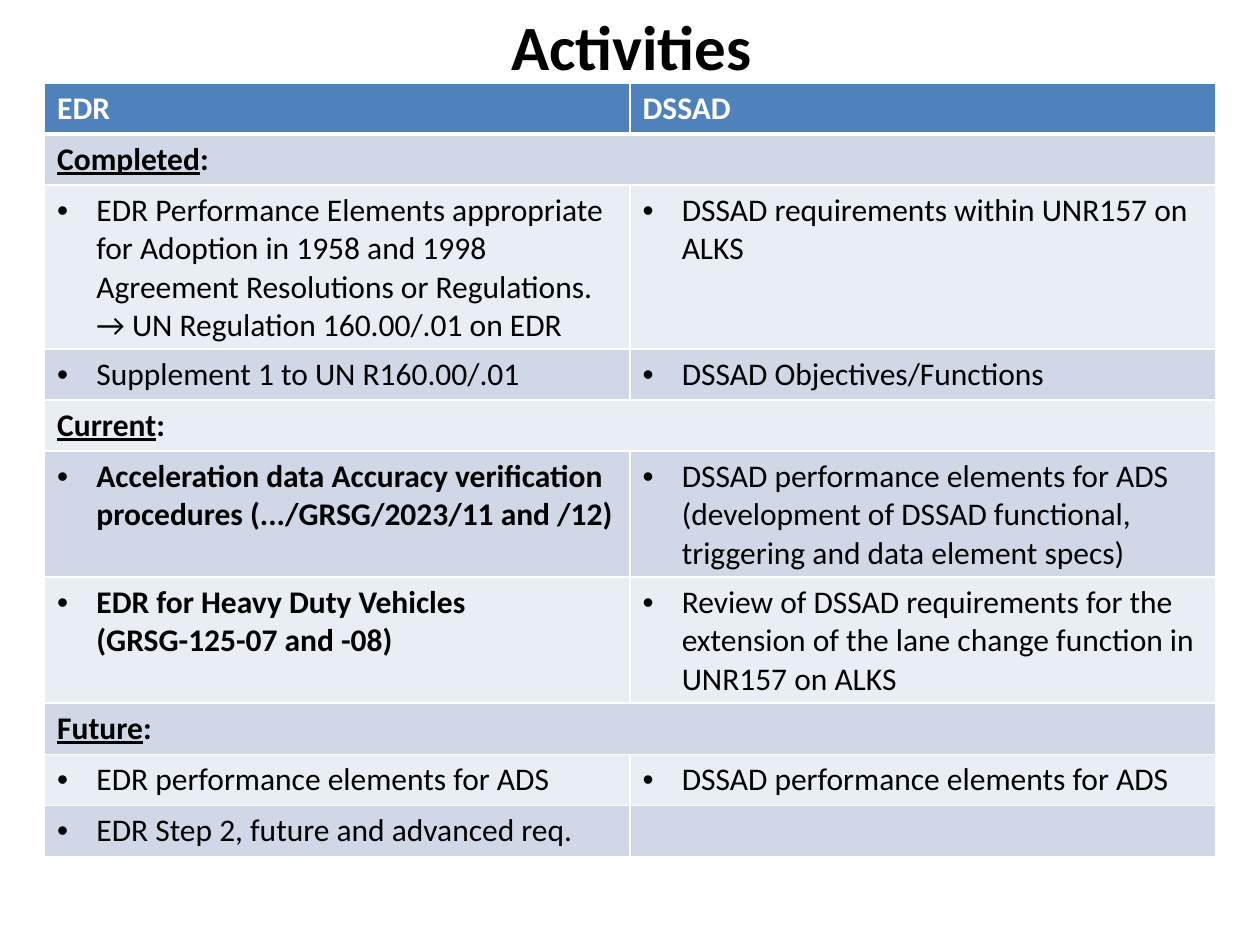
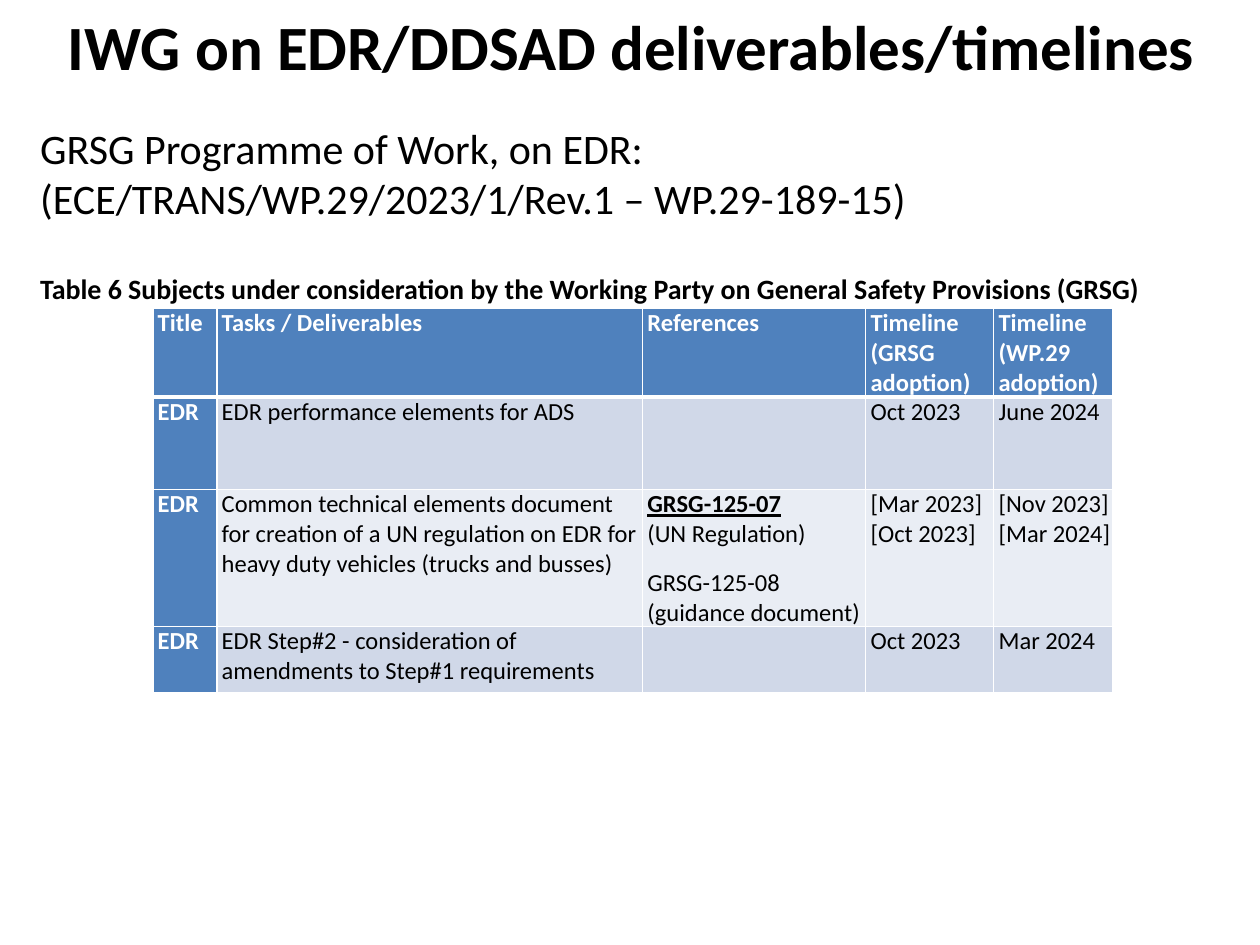
from lxml.etree import SubElement
from pptx import Presentation
from pptx.dml.color import RGBColor
from pptx.enum.text import MSO_ANCHOR as Anchor, PP_ALIGN as Align
from pptx.oxml.ns import qn
from pptx.util import Cm, Pt

FONT = "Calibri"
BLACK, WHITE, HEADER = "000000", "FFFFFF", "4F81BD"
BANDS = ("E9EDF4", "D0D8E8")
HANGING = 0.79

ACTIVITIES = [
    ("EDR", "DSSAD"),
    ("Completed",),
    ("EDR Performance Elements appropriate for Adoption in 1958 and 1998 Agreement "
     "Resolutions or Regulations.\n→ UN Regulation 160.00/.01 on EDR",
     "DSSAD requirements within UNR157 on ALKS"),
    ("Supplement 1 to UN R160.00/.01", "DSSAD Objectives/Functions"),
    ("Current",),
    ("Acceleration data Accuracy verification procedures (.../GRSG/2023/11 and /12)",
     "DSSAD performance elements for ADS (development of DSSAD functional, "
     "triggering and data element specs)"),
    ("EDR for Heavy Duty Vehicles\n(GRSG-125-07 and -08)",
     "Review of DSSAD requirements for the extension of the lane change function in "
     "UNR157 on ALKS"),
    ("Future",),
    ("EDR performance elements for ADS", "DSSAD performance elements for ADS"),
    ("EDR Step 2, future and advanced req.", ""),
]
BOLD_ACTIVITY_ROWS = (5, 6)

REFERENCES = "GRSG-125-07\n(UN Regulation)", "GRSG-125-08\n(guidance document)"
DELIVERABLES = [
    ("Title", "Tasks / Deliverables", "References",
     ("Timeline", "(GRSG adoption)"), ("Timeline", "(WP.29 adoption)")),
    ("EDR", "EDR performance elements for ADS", "", "Oct 2023", "June 2024"),
    ("EDR", "Common technical elements document for creation of a UN regulation on EDR "
     "for heavy duty vehicles (trucks and busses)", REFERENCES,
     "[Mar 2023]\n[Oct 2023]", "[Nov 2023]\n[Mar 2024]"),
    ("EDR", "EDR Step#2 - consideration of amendments to Step#1 requirements", "",
     "Oct 2023", "Mar 2024"),
]


def rgb(value):
    """Turn a hex string into a colour."""
    return RGBColor.from_string(value)


def add_run(paragraph, text, size, color=BLACK, bold=False, underline=False):
    """Add styled text, with a line break at each newline."""
    for number, line in enumerate(text.split("\n")):
        if number:
            paragraph.add_line_break()
        run = paragraph.add_run()
        run.text = line
        font = run.font
        font.name, font.size, font.bold = FONT, Pt(size), bold
        font.underline = underline
        font.color.rgb = rgb(color)


def space(paragraph, before=0, after=0):
    """Set the gaps around a paragraph in points."""
    paragraph.space_before, paragraph.space_after = Pt(before), Pt(after)


def indent(paragraph, left, bullet=False):
    """Indent a paragraph, with a hanging bullet on request."""
    properties = paragraph._p.get_or_add_pPr()
    properties.set("marL", str(Cm(left)))
    properties.set("indent", str(-Cm(left) if bullet else 0))
    if bullet:
        SubElement(properties, qn("a:buFont"), typeface="Arial")
        SubElement(properties, qn("a:buChar"), char="•")


def add_textbox(slide, left, top, width, height):
    """Add a wrapping text box and return its text frame."""
    frame = slide.shapes.add_textbox(Cm(left), Cm(top), Cm(width), Cm(height)).text_frame
    frame.word_wrap = True
    return frame


def add_title(slide, text):
    """Add the centred slide title."""
    frame = add_textbox(slide, 0.03, 0.33, 25.4, 1.17)
    frame.vertical_anchor = Anchor.MIDDLE
    frame.paragraphs[0].alignment = Align.CENTER
    add_run(frame.paragraphs[0], text, 36, bold=True)


def style_cell(cell, fill, row):
    """Give a cell white borders, thick below the header, and a fill."""
    properties = cell._tc.get_or_add_tcPr()
    thick = {0: "lnB", 1: "lnT"}.get(row)
    for side in ("lnL", "lnR", "lnT", "lnB"):
        border = SubElement(properties, qn(f"a:{side}"), w=str(Pt(3 if side == thick else 1)))
        SubElement(SubElement(border, qn("a:solidFill")), qn("a:srgbClr"), val=WHITE)
    cell.fill.solid()
    cell.fill.fore_color.rgb = rgb(fill)


def add_grid(slide, left, top, widths, heights):
    """Add a table with a coloured header and banded rows."""
    table = slide.shapes.add_table(len(heights), len(widths), Cm(left), Cm(top),
                                   Cm(sum(widths)), Cm(sum(heights))).table
    for column, width in zip(table.columns, widths):
        column.width = Cm(width)
    for number, (row, height) in enumerate(zip(table.rows, heights)):
        row.height = Cm(height)
        for cell in row.cells:
            style_cell(cell, BANDS[number % 2] if number else HEADER, number)
    return table


def fill_activities(table):
    """Write headings, merged phase rows and bulleted activities."""
    for row, texts in enumerate(ACTIVITIES):
        if len(texts) == 1:
            table.cell(row, 0).merge(table.cell(row, 1))
        for column, text in enumerate(texts):
            if not text:
                continue
            paragraph = table.cell(row, column).text_frame.paragraphs[0]
            if row == 0:
                add_run(paragraph, text, 18, WHITE, bold=True)
            elif len(texts) == 1:
                space(paragraph, 6.4)
                add_run(paragraph, text, 18, bold=True, underline=True)
                add_run(paragraph, ":", 18, bold=True)
            else:
                space(paragraph, 0 if column else 6.4)
                indent(paragraph, HANGING, bullet=True)
                add_run(paragraph, text, 18, bold=column == 0 and row in BOLD_ACTIVITY_ROWS)


def fill_deliverable(cell, content, heading):
    """Write one deliverables cell, a paragraph for each text."""
    cell.margin_left = cell.margin_right = cell.margin_top = cell.margin_bottom = 0
    texts = (content,) if isinstance(content, str) else content
    for number, text in enumerate(texts):
        if not text:
            continue
        frame = cell.text_frame
        paragraph = frame.add_paragraph() if number else frame.paragraphs[0]
        indent(paragraph, 0.1)
        if not heading:
            space(paragraph, 5 if number else 2, 6)
        if text == REFERENCES[0]:
            document, kind = text.split("\n")
            add_run(paragraph, document, 14, bold=True, underline=True)
            paragraph.add_line_break()
            add_run(paragraph, kind, 14)
        else:
            add_run(paragraph, text, 14, WHITE if heading else BLACK, bold=heading)


def fill_deliverables(table):
    """Write the deliverables with white row and column headings."""
    for row, contents in enumerate(DELIVERABLES):
        for column, content in enumerate(contents):
            cell = table.cell(row, column)
            if column == 0:
                cell.fill.fore_color.rgb = rgb(HEADER)
            fill_deliverable(cell, content, row == 0 or column == 0)


def add_programme(slide):
    """Add the programme reference and the table caption."""
    frame = add_textbox(slide, 0.56, 2.34, 24.74, 15.39)
    programme, caption = frame.paragraphs[0], frame.add_paragraph()
    space(programme, 6.4)
    add_run(programme, "GRSG Programme of Work, on EDR:\n"
            "(ECE/TRANS/WP.29/2023/1/Rev.1 – WP.29-189-15)", 24)
    space(caption, 27.5)
    add_run(caption, "Table 6 Subjects under consideration by the Working Party on "
            "General Safety Provisions (GRSG)", 16, bold=True)


def main():
    """Build both slides and save them."""
    deck = Presentation()
    deck.slide_width, deck.slide_height = Cm(25.4), Cm(19.05)
    blank = deck.slide_layouts[6]

    activities = deck.slides.add_slide(blank)
    add_title(activities, "Activities")
    fill_activities(add_grid(activities, 0.9, 1.67, [11.8] * 2, [1.03] * len(ACTIVITIES)))

    timelines = deck.slides.add_slide(blank)
    add_title(timelines, "IWG on EDR/DDSAD deliverables/timelines")
    fill_deliverables(add_grid(timelines, 3.08, 6.22, [1.29, 8.58, 4.5, 2.58, 2.4],
                               [1.73, 1.87, 1.87, 1.34]))
    add_programme(timelines)

    deck.save("out.pptx")


if __name__ == "__main__":
    main()
